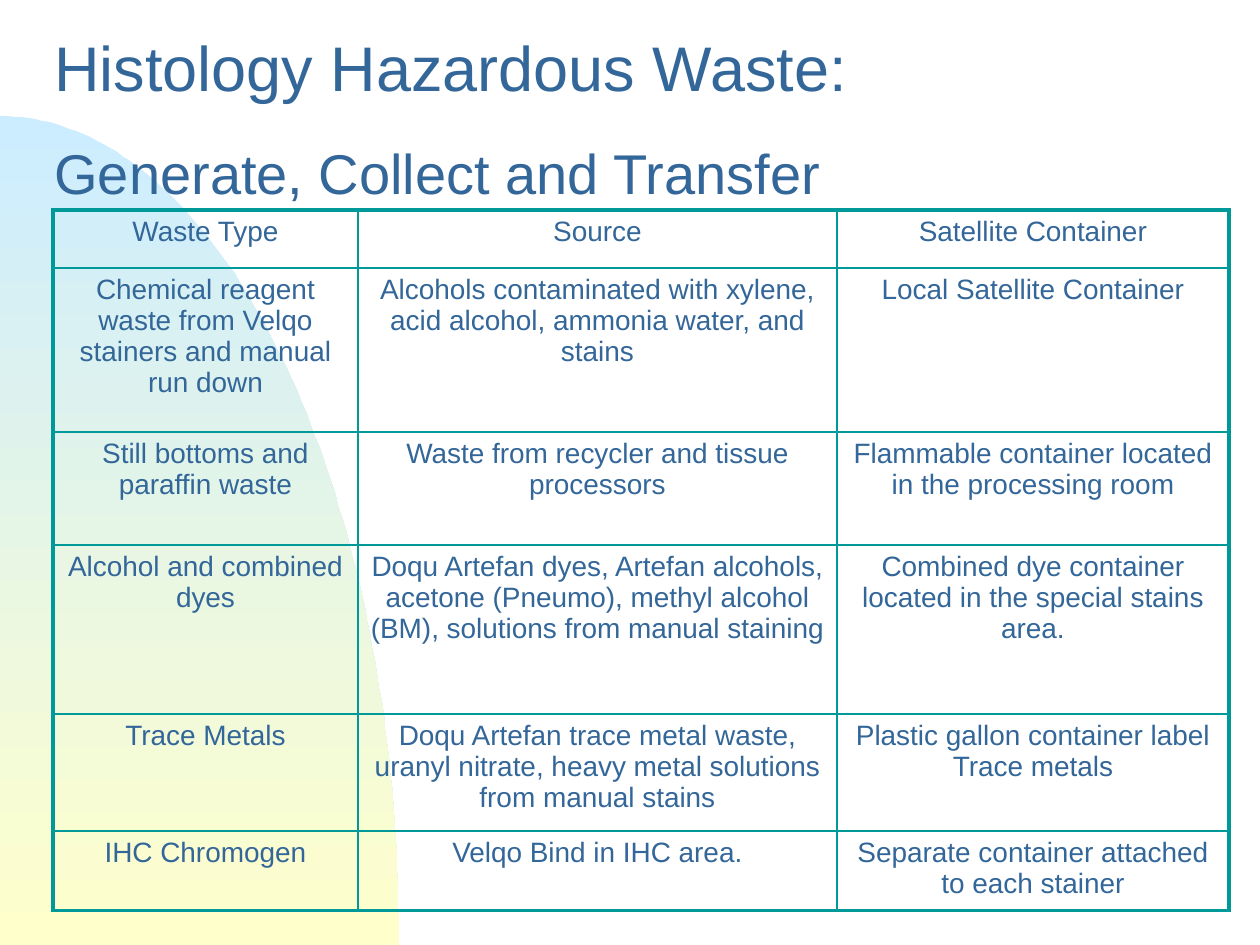
from dataclasses import dataclass
from math import cos, pi, sin

from lxml import etree
from pptx import Presentation
from pptx.dml.color import RGBColor
from pptx.enum import text
from pptx.oxml import ns
from pptx.util import Emu, Pt

PX = 914400 / 126


@dataclass(frozen=True)
class Theme:
    font: str = "Arial"
    ink: str = "336699"
    border: str = "009999"
    arc_top: str = "CCECFF"
    arc_bottom: str = "FFFFCC"
    title_size: int = 36
    subtitle_size: int = 32
    cell_size: int = 16
    outer_line: float = 2.25
    inner_line: float = 1


THEME = Theme()
COLUMNS = [305, 479, 392]
ROWS = [58, 164, 113, 169, 117, 79]
WASTE = [
    ("Waste Type", "Source", "Satellite Container"),
    ("Chemical reagent waste from Velqo stainers and manual run down",
     "Alcohols contaminated with xylene, acid alcohol, ammonia water, and stains",
     "Local Satellite Container"),
    ("Still bottoms and paraffin waste",
     "Waste from recycler and tissue processors",
     "Flammable container located in the processing room"),
    ("Alcohol and combined dyes",
     "Doqu Artefan dyes, Artefan alcohols, acetone (Pneumo), methyl alcohol (BM), "
     "solutions from manual staining",
     "Combined dye container located in the special stains area."),
    ("Trace Metals",
     "Doqu Artefan trace metal waste, uranyl nitrate, heavy metal solutions "
     "from manual stains",
     "Plastic gallon container label Trace metals"),
    ("IHC Chromogen", "Velqo Bind in IHC area.",
     "Separate container attached to each stainer"),
]


def px(length):
    return Emu(round(length * PX))


def write(para, words, size, align=text.PP_ALIGN.LEFT, spacing=None, before=0):
    para.alignment = align
    para.space_before = Pt(before)
    if spacing:
        para.line_spacing = spacing
    span = para.add_run()
    span.text = words
    span.font.name = THEME.font
    span.font.size = Pt(size)
    span.font.color.rgb = RGBColor.from_string(THEME.ink)


def add_arc(page, left, top, width, height, steps=90):
    """Quarter ellipse centred on the lower left corner of its box."""
    angles = [pi / 2 * step / steps for step in range(steps + 1)]
    rim = [(left + width * sin(angle), top + height * (1 - cos(angle)))
           for angle in angles]
    builder = page.shapes.build_freeform(*rim[0], scale=PX)
    builder.add_line_segments(rim[1:] + [(left, top + height)], close=True)
    arc = builder.convert_to_shape()
    arc.shadow.inherit = False
    arc.line.fill.background()
    arc.fill.gradient()
    arc.fill.gradient_angle = 270
    colours = (THEME.arc_top, THEME.arc_bottom)
    for position, (stop, colour) in enumerate(zip(arc.fill.gradient_stops, colours)):
        stop.position = position
        stop.color.rgb = RGBColor.from_string(colour)


def add_title(page, left, top, width, height):
    box = page.shapes.add_textbox(px(left), px(top), px(width), px(height))
    frame = box.text_frame
    frame.word_wrap = True
    frame.vertical_anchor = text.MSO_ANCHOR.MIDDLE
    write(frame.paragraphs[0], "Histology Hazardous Waste:", THEME.title_size,
          spacing=0.7)
    write(frame.add_paragraph(), "Generate, Collect and Transfer",
          THEME.subtitle_size, spacing=0.7, before=31)


def set_border(cell, side, width):
    line = etree.SubElement(cell._tc.get_or_add_tcPr(), ns.qn(f"a:ln{side}"),
                            w=str(Pt(width)))
    fill = etree.SubElement(line, ns.qn("a:solidFill"))
    etree.SubElement(fill, ns.qn("a:srgbClr"), val=THEME.border)


def add_waste_table(page, left, top):
    frame = page.shapes.add_table(len(ROWS), len(COLUMNS), px(left), px(top),
                                  px(sum(COLUMNS)), px(sum(ROWS)))
    table = frame.table
    table.first_row = table.horz_banding = False
    for column, width in zip(table.columns, COLUMNS):
        column.width = px(width)
    for row, height in zip(table.rows, ROWS):
        row.height = px(height)

    for r, entries in enumerate(WASTE):
        for c, words in enumerate(entries):
            cell = table.cell(r, c)
            write(cell.text_frame.paragraphs[0], words, THEME.cell_size,
                  align=text.PP_ALIGN.CENTER)
            # Heavy lines run round the outside only
            outer = {"L": c == 0, "R": c == len(COLUMNS) - 1,
                     "T": r == 0, "B": r == len(ROWS) - 1}
            for side, is_outer in outer.items():
                set_border(cell, side,
                           THEME.outer_line if is_outer else THEME.inner_line)
            cell.fill.background()


def main():
    deck = Presentation()
    deck.slide_width, deck.slide_height = px(1260), px(945)
    page = deck.slides.add_slide(deck.slide_layouts[6])
    # Background arc, heading, then the waste table
    add_arc(page, 0, 116, 399, 829)
    add_title(page, 42, 53, 1176, 147)
    add_waste_table(page, 53, 210)
    deck.save("out.pptx")


if __name__ == "__main__":
    main()
